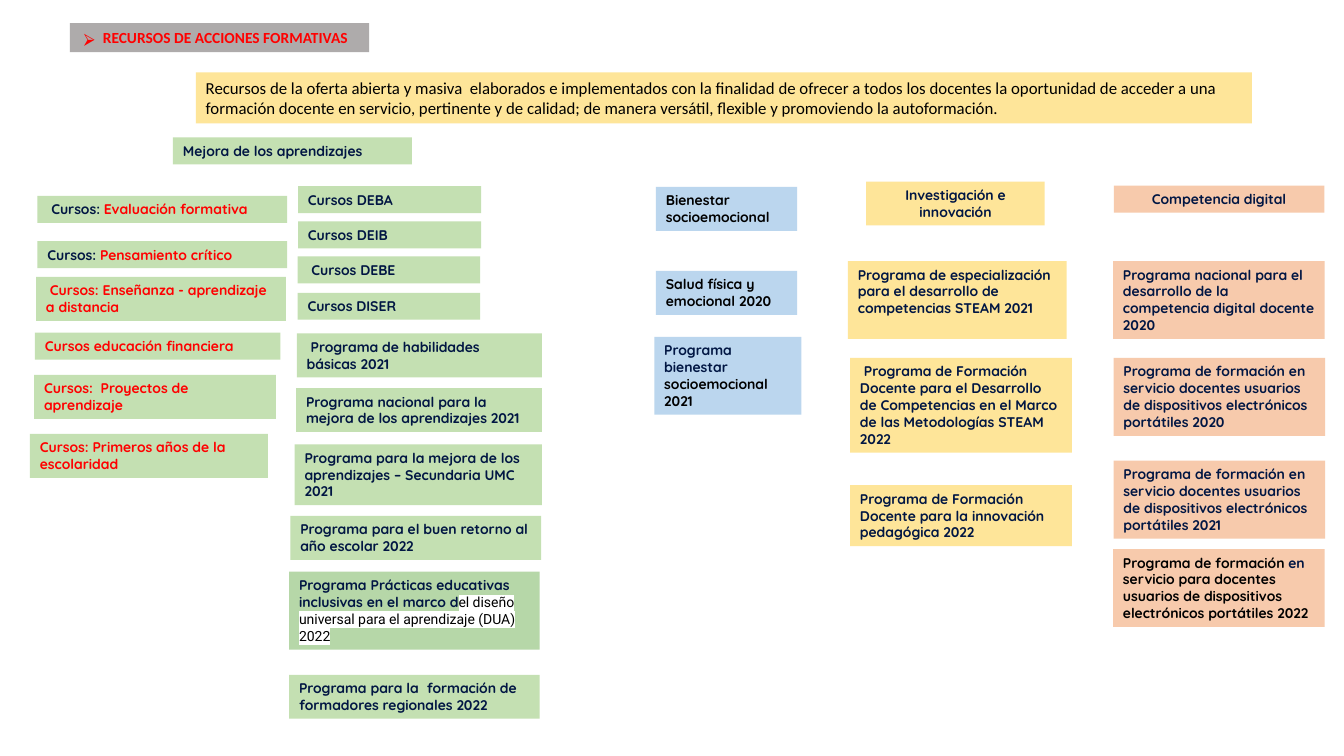
from dataclasses import dataclass

from lxml import etree
from pptx import Presentation
from pptx.dml.color import RGBColor
from pptx.enum.shapes import MSO_SHAPE
from pptx.enum.text import MSO_ANCHOR, PP_ALIGN
from pptx.oxml.ns import qn
from pptx.util import Pt


@dataclass(frozen=True)
class Theme:
    navy: str = "011643"
    black: str = "000000"
    red: str = "FF0000"
    white: str = "FFFFFF"
    grey: str = "AEABAB"
    yellow: str = "FEE599"
    green: str = "C4E0B2"
    dark_green: str = "B6D7A8"
    blue: str = "BBD6EE"
    orange: str = "F7CAAC"
    card_font: str = "Quicksand"
    heading_font: str = "Calibri"
    inset_font: str = "Roboto"
    bullet_font: str = "Noto Sans Symbols"
    card_size: int = 10
    title_size: int = 11
    intro_size: int = 12


class Board:
    """Holds the theme and the slide on which the boxes are placed."""

    def __init__(self, slide, theme):
        self.slide = slide
        self.theme = theme

    def box(self, left, top, width, height, fill):
        rect = self.slide.shapes.add_shape(
            MSO_SHAPE.RECTANGLE, Pt(left), Pt(top), Pt(width), Pt(height))
        rect.shadow.inherit = False
        rect.fill.solid()
        rect.fill.fore_color.rgb = RGBColor.from_string(fill)
        rect.line.fill.background()
        frame = rect.text_frame
        frame.word_wrap = True
        frame.vertical_anchor = MSO_ANCHOR.TOP
        paragraph = frame.paragraphs[0]
        paragraph.alignment = PP_ALIGN.LEFT
        return frame, paragraph

    def style(self, font, name=None, size=None, color=None, bold=None):
        if name:
            font.name = name
        if size:
            font.size = Pt(size)
        if color:
            font.color.rgb = RGBColor.from_string(color)
        if bold is not None:
            font.bold = bold

    def title(self, left, top, width, height, text):
        t = self.theme
        frame, paragraph = self.box(left, top, width, height, t.grey)
        frame.margin_right = Pt(12)
        paragraph.alignment = PP_ALIGN.CENTER
        self.style(paragraph.font, t.heading_font, t.title_size, t.red, True)
        paragraph.add_run().text = text
        # Arrow bullet with a hanging indent
        props = paragraph._p.get_or_add_pPr()
        props.set("marL", str(Pt(13.5)))
        props.set("indent", str(Pt(-13.5)))
        bullet_color = etree.Element(qn("a:buClr"))
        etree.SubElement(bullet_color, qn("a:srgbClr"), val=t.red)
        props.insert(0, bullet_color)
        props.insert(1, etree.Element(qn("a:buFont"), typeface=t.bullet_font))
        props.insert(2, etree.Element(qn("a:buChar"), char="⮚"))

    def intro(self, left, top, width, height, text):
        t = self.theme
        _, paragraph = self.box(left, top, width, height, t.yellow)
        self.style(paragraph.font, t.heading_font, t.intro_size, t.black)
        paragraph.add_run().text = text

    def card(self, fill, left, top, width, lines, *parts, centered=False):
        """Parts are (text, color) pairs; the height follows the line count."""
        t = self.theme
        _, paragraph = self.box(left, top, width, 7.2 + 12.1 * lines, fill)
        if centered:
            paragraph.alignment = PP_ALIGN.CENTER
        one_color = len({color for _, color in parts}) == 1
        self.style(paragraph.font, t.card_font, t.card_size,
                   parts[0][1] if one_color else None, True)
        for text, color in parts:
            run = paragraph.add_run()
            run.text = text
            if not one_color:
                self.style(run.font, color=color)
        return paragraph

    def highlight(self, paragraph, text):
        t = self.theme
        run = paragraph.add_run()
        run.text = text
        self.style(run.font, t.inset_font, color=t.black, bold=False)
        marker = etree.Element(qn("a:highlight"))
        etree.SubElement(marker, qn("a:srgbClr"), val=t.white)
        run._r.get_or_add_rPr().find(qn("a:solidFill")).addnext(marker)


def main():
    presentation = Presentation()
    presentation.slide_width, presentation.slide_height = Pt(960), Pt(540)
    slide = presentation.slides.add_slide(presentation.slide_layouts[6])
    theme = Theme()
    board = Board(slide, theme)
    navy, black, red = theme.navy, theme.black, theme.red

    # Title and introduction
    board.title(49.9, 16.6, 213.8, 20.7, "RECURSOS DE ACCIONES FORMATIVAS")
    board.intro(139.9, 51.8, 754.3, 36.4,
                "Recursos de la oferta abierta y masiva  elaborados e implementados con la "
                "finalidad de ofrecer a todos los docentes la oportunidad de acceder a una "
                "formación docente en servicio, pertinente y de calidad; de manera versátil, "
                "flexible y promoviendo la autoformación.")

    # Column headings
    board.card(theme.green, 123.6, 98.1, 170.6, 1, ("Mejora de los aprendizajes", navy))
    board.card(theme.blue, 468.6, 133.5, 100.8, 2, ("Bienestar socioemocional", black))
    board.card(theme.yellow, 618.7, 129.7, 127.6, 2,
               ("Investigación e innovación", navy), centered=True)
    board.card(theme.orange, 795.6, 132.6, 150.4, 1,
               ("Competencia digital", navy), centered=True)

    # Cards: left, top, width, number of lines, coloured text parts
    learning = [
        (26.8, 139.9, 178.4, 1, (" Cursos: ", navy), ("Evaluación formativa", red)),
        (26.8, 172.2, 178.4, 1, ("Cursos: ", navy), ("Pensamiento crítico", red)),
        (25.8, 197.8, 178.4, 2, (" Cursos: Enseñanza - aprendizaje a distancia", red)),
        (25, 237.6, 175.4, 1, ("Cursos educación financiera", red)),
        (24.4, 267.8, 172.6, 2, ("Cursos:  Proyectos de aprendizaje", red)),
        (21.4, 310, 169.9, 2, ("Cursos: Primeros años de la escolaridad", red)),
        (212.9, 132.9, 130.8, 1, ("Cursos DEBA", navy)),
        (212.9, 158.2, 130.8, 1, ("Cursos DEIB", navy)),
        (212.6, 183.1, 130.4, 1, (" Cursos DEBE", navy)),
        (212.6, 209.1, 130.4, 1, ("Cursos DISER", navy)),
        (212, 238.2, 175.1, 2, (" Programa de habilidades básicas 2021", navy)),
        (211.5, 277.2, 175.6, 2,
         ("Programa nacional para la mejora de los aprendizajes 2021", navy)),
        (210.5, 317.4, 176.6, 3,
         ("Programa para la mejora de los aprendizajes – Secundaria UMC 2021", navy)),
        (207.4, 368.6, 179.2, 2,
         ("Programa para el buen retorno al año escolar 2022", navy)),
        (206.5, 482, 179, 2,
         ("Programa para la  formación de formadores regionales 2022", navy)),
    ]
    wellbeing = [
        (468.6, 193.5, 100.8, 2, ("Salud física y emocional 2020", black)),
        (467.4, 240.7, 105.1, 4,
         ("Programa bienestar ", navy), ("socioemocional 2021", black)),
    ]
    innovation = [
        (605.7, 186.5, 156.2, 4,
         ("Programa de especialización para el desarrollo de competencias STEAM 2021", navy)),
        (607.2, 255.7, 158.4, 5,
         (" Programa de Formación Docente para el Desarrollo de Competencias "
          "en el Marco de las Metodologías STEAM 2022", navy)),
        (607.2, 346.6, 158.4, 3,
         ("Programa de Formación Docente para la innovación pedagógica 2022", navy)),
    ]
    devices = ("Programa de formación en servicio docentes usuarios de "
               "dispositivos electrónicos portátiles ")
    digital = [
        (795.1, 186.5, 151.2, 4,
         ("Programa nacional para el desarrollo de la competencia digital docente 2020", navy)),
        (795.4, 255.7, 151.2, 4, (devices + "2020", navy)),
        (795.4, 329.1, 151.2, 4, (devices + "2021", navy)),
        (795.1, 392.2, 151.2, 4,
         ("Programa de formación ", black), ("en", navy),
         (" servicio para docentes usuarios de dispositivos electrónicos portátiles 2022", black)),
    ]
    columns = [(theme.green, learning), (theme.blue, wellbeing),
               (theme.yellow, innovation), (theme.orange, digital)]
    for fill, cards in columns:
        for card in cards:
            board.card(fill, *card)

    # Inclusive practices, with a highlighted ending
    inclusive = board.card(theme.dark_green, 206.5, 408.4, 179, 4,
                           ("Programa Prácticas educativas inclusivas en el marco d", navy))
    board.highlight(inclusive, "el diseño universal para el aprendizaje (DUA) 2022")

    presentation.save("out.pptx")


if __name__ == "__main__":
    main()
